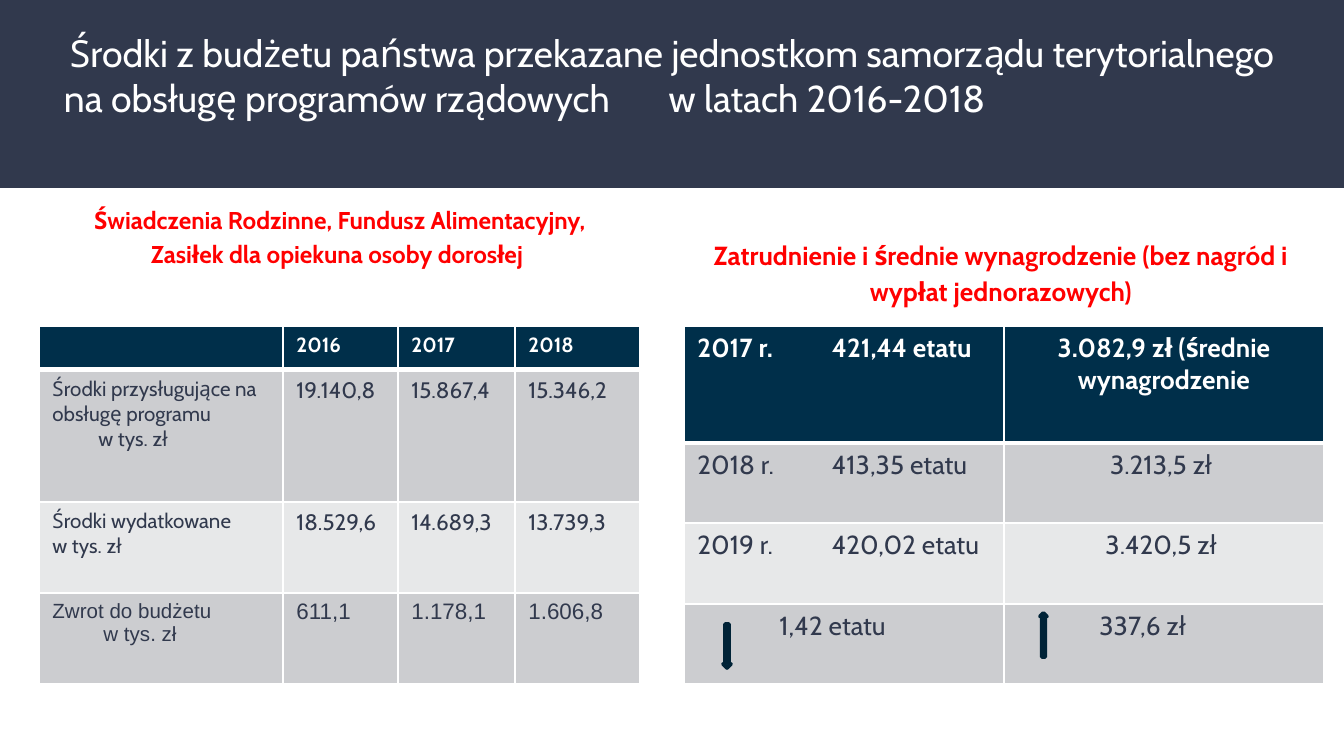
from lxml import etree
from pptx import Presentation
from pptx.dml.color import RGBColor
from pptx.enum.shapes import MSO_SHAPE as Shape
from pptx.enum.text import MSO_ANCHOR as Anchor, PP_ALIGN as Align
from pptx.oxml.ns import qn
from pptx.util import Emu, Pt

PX = 914400 / 134.4
SLATE = RGBColor(0x31, 0x39, 0x4D)
NAVY = RGBColor(0x00, 0x2F, 0x4A)
INK = RGBColor(0x00, 0x23, 0x37)
GREY = RGBColor(0xCC, 0xCD, 0xD0)
PALE = RGBColor(0xE7, 0xE8, 0xE9)
RED = RGBColor(0xFF, 0x00, 0x00)
WHITE = RGBColor(0xFF, 0xFF, 0xFF)
INSET = 13


def px(*lengths):
    return [Emu(round(length * PX)) for length in lengths]


def write(para, text, size, color, bold=False, font="Cabin", align=Align.LEFT,
          indent=0, tab=0):
    para.alignment = align
    props = para._p.get_or_add_pPr()
    props.set("marL", str(px(indent)[0]))
    props.set("indent", "0")
    if tab:
        stops = etree.SubElement(props, qn("a:tabLst"))
        etree.SubElement(stops, qn("a:tab"), pos=str(px(tab)[0]), algn="l")
    span = para.add_run()
    span.text = text
    span.font.name = font
    span.font.size = Pt(size)
    span.font.bold = bold
    span.font.color.rgb = color


deck = Presentation()
deck.slide_width, deck.slide_height = px(1344, 756)
page = deck.slides.add_slide(deck.slide_layouts[6])

# Title band
band = page.shapes.add_shape(Shape.RECTANGLE, *px(0, 0, 1344, 188))
band.shadow.inherit = False
band.fill.solid()
band.fill.fore_color.rgb = SLATE
band.line.fill.background()

# Title and the two headings
text_boxes = [
    ((46, 17, 1253, 148), 20, WHITE, False, None, [
        ("Środki z budżetu państwa przekazane jednostkom samorządu terytorialnego",
         {"align": Align.CENTER}),
        ("na obsługę programów rządowych\tw latach 2016-2018",
         {"indent": 5, "tab": 904})]),
    ((46, 188, 587, 110), 13, RED, True, 1.15, [
        ("Świadczenia Rodzinne, Fundusz Alimentacyjny, "
         "Zasiłek dla opiekuna osoby dorosłej ", {"align": Align.CENTER})]),
    ((677, 222, 648, 100), 14, RED, True, 1.15, [
        ("Zatrudnienie i średnie wynagrodzenie (bez nagród i "
         "wypłat jednorazowych)", {"align": Align.CENTER})]),
]
for place, size, color, bold, spacing, lines in text_boxes:
    box = page.shapes.add_textbox(*px(*place))
    frame = box.text_frame
    frame.word_wrap = True
    frame.vertical_anchor = Anchor.TOP
    frame.margin_left, frame.margin_right = px(INSET, INSET)
    frame.margin_top, frame.margin_bottom = px(INSET, INSET)
    for index, (text, layout) in enumerate(lines):
        para = frame.paragraphs[0] if index == 0 else frame.add_paragraph()
        if spacing:
            para.line_spacing = spacing
        write(para, text, size, color, bold, **layout)

# Table contents: each cell is a list of (text, size, layout) lines
center = {"align": Align.CENTER}
arial = {"font": "Arial"}
labels = [
    [],
    [("Środki przysługujące na obsługę programu", 11, {}),
     ("w tys. zł", 11, {"indent": 46})],
    [("Środki wydatkowane", 11, {}), ("w tys. zł", 11, {})],
    [("Zwrot do budżetu", 11, arial),
     ("w tys. zł", 11, {"indent": 51, **arial})],
]
amounts = [
    (["2016", "2017", "2018"], 11, {}),
    (["19.140,8", "15.867,4", "15.346,2"], 12, {}),
    (["18.529,6", "14.689,3", "13.739,3"], 12, {}),
    (["611,1", "1.178,1", "1.606,8"], 12, arial),
]
benefits = [[label] + [[(value, size, layout)] for value in values]
            for label, (values, size, layout) in zip(labels, amounts)]

jobs = [
    ("2017 r.\t421,44 etatu", {"tab": 87}, "3.082,9 zł (średnie wynagrodzenie", center),
    ("2018 r.\t413,35 etatu", {"tab": 94}, "3.213,5 zł ", center),
    ("2019 r.\t420,02 etatu", {"tab": 94}, "3.420,5 zł ", center),
    ("1,42 etatu", {"indent": 82}, "337,6 zł", {"indent": 82}),
]
staffing = [[[(posts, 14, left)], [(pay, 14, right)]]
            for posts, left, pay, right in jobs]

tables = [
    (39, [244, 115, 117, 125], [44, 132, 91, 91], benefits),
    (684, [320, 320], [117, 80, 81, 80], staffing),
]
for left, widths, heights, content in tables:
    holder = page.shapes.add_table(len(heights), len(widths),
                                   *px(left, 326, sum(widths), sum(heights)))
    table = holder.table
    for column, width in zip(table.columns, px(*widths)):
        column.width = width
    for r, (height, line) in enumerate(zip(px(*heights), content)):
        table.rows[r].height = height
        for c, lines in enumerate(line):
            cell = table.cell(r, c)
            # White borders, thick under the header
            weights = {"L": 1, "R": 1, "T": 3 if r == 1 else 1, "B": 3 if r == 0 else 1}
            for side, weight in weights.items():
                edge = etree.SubElement(cell._tc.get_or_add_tcPr(), qn(f"a:ln{side}"),
                                        w=str(Pt(weight)))
                paint = etree.SubElement(edge, qn("a:solidFill"))
                etree.SubElement(paint, qn("a:srgbClr"), val=str(WHITE))
            cell.fill.solid()
            cell.fill.fore_color.rgb = NAVY if r == 0 else GREY if r % 2 else PALE
            frame = cell.text_frame
            if not lines:
                frame.paragraphs[0].font.size = Pt(11)
            for index, (text, size, layout) in enumerate(lines):
                para = frame.paragraphs[0] if index == 0 else frame.add_paragraph()
                write(para, text, size, WHITE if r == 0 else SLATE, r == 0, **layout)

# Change arrows in the last row
for kind, left, top, width in [(Shape.DOWN_ARROW, 723, 624, 8),
                               (Shape.UP_ARROW, 1040, 613, 7)]:
    arrow = page.shapes.add_shape(kind, *px(left, top, width, 44))
    arrow.shadow.inherit = False
    arrow.fill.solid()
    arrow.fill.fore_color.rgb = NAVY
    arrow.line.color.rgb = INK
    arrow.line.width = Pt(2)

deck.save("out.pptx")
